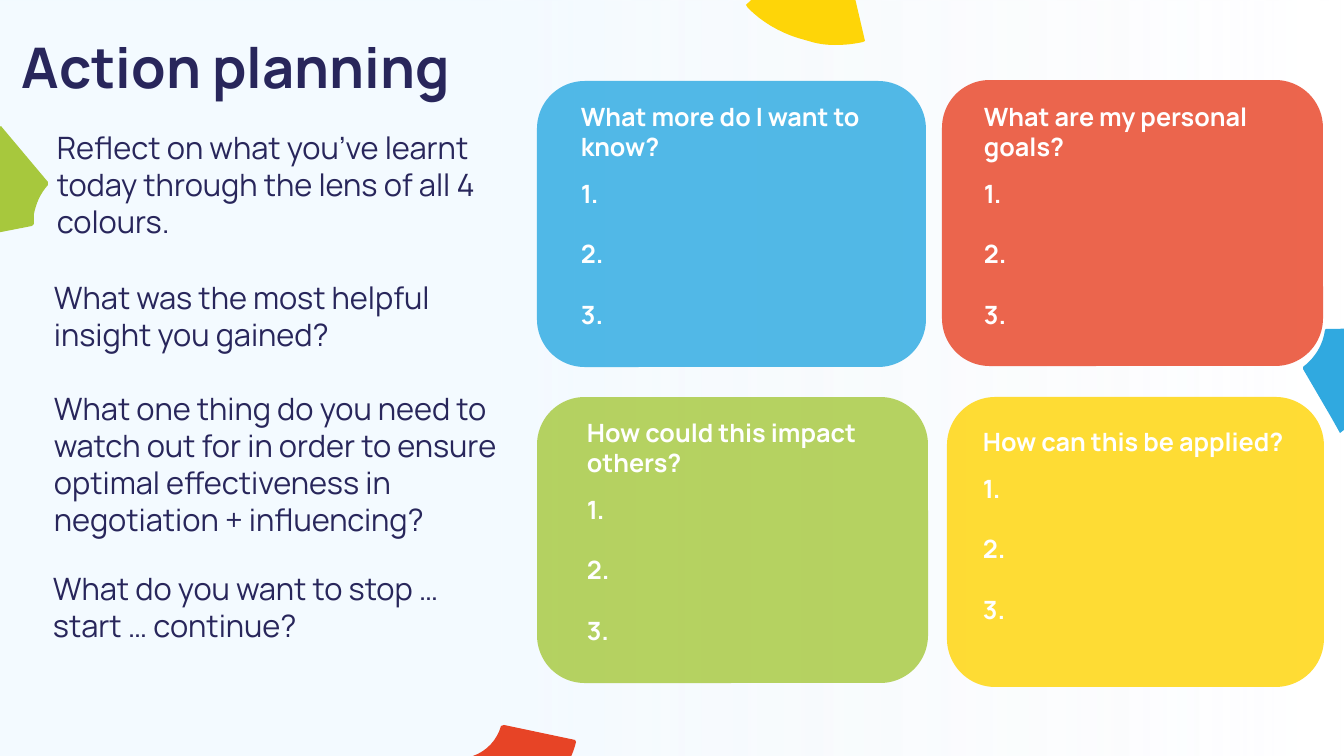
from lxml import etree
from pptx import Presentation
from pptx import util as u
from pptx.dml.color import RGBColor
from pptx.enum import shapes, text
from pptx.oxml.ns import qn

FONT, NAVY, WHITE = "Manrope", "28265B", "FFFFFF"
CARD_OPACITY = 82
LINE_PT = 21.6

PROMPTS = [
    ((12, 28, 620, 78), 40, True, ["Action planning"]),
    ((47, 124, 476, 122), 22, False,
     ["Reflect on what you’ve learnt today through the lens of all 4 colours."]),
    ((44, 274, 490, 271), 22, False,
     ["What was the most helpful insight you gained?",
      "What one thing do you need to watch out for in order to ensure optimal "
      "effectiveness in negotiation + influencing?"]),
    ((43, 565, 476, 122), 22, False,
     ["What do you want to stop … start … continue?"]),
]

CARDS = [
    ("What more do I want to know?", "2DAAE2", (537, 81, 389, 286), (571, 96, 353, 241)),
    ("What are my personal goals?", "E84427", (942, 80, 381, 286), (974, 96, 350, 248)),
    ("How could this impact others?", "A7C93F", (537, 397, 391, 286), (577, 412, 319, 241)),
    ("How can this be applied?", "FFD508", (947, 397, 377, 290), (973, 421, 347, 211)),
]

# Pairs are corners; six numbers are two curve handles and an end point.
WEDGES = [
    ("A7C83D", [(1, 126), (48, 182), (48, 185), (40, 194, 36, 204, 34, 214),
                (34, 224), (32, 226), (-9, 234), (-38, 239), (-40, 237),
                (-42, 219, -41, 201, -35, 183), (-31, 167, -23, 153, -13, 141),
                (-4, 131)]),
    ("E74426", [(548, 793), (532, 811, 514, 823, 494, 830), (492, 829),
                (478, 778), (472, 759), (473, 756),
                (487, 751, 497, 740, 501, 726), (504, 725), (575, 740),
                (576, 742), (573, 755, 566, 768, 558, 780)]),
    ("FED508", [(798, 38), (779, 32, 762, 22, 748, 8), (746, 5), (748, 3),
                (781, -27), (800, -44), (803, -44),
                (810, -37, 820, -33, 830, -31), (835, -30, 841, -30, 846, -31),
                (848, -30), (855, -2), (865, 41), (863, 42),
                (854, 44, 845, 45, 835, 45), (827, 45, 819, 44, 812, 42)]),
    ("30A9E0", [(1344, 430), (1351, 425), (1360, 418, 1369, 409, 1376, 400),
                (1386, 386, 1393, 371, 1397, 356),
                (1399, 347, 1400, 338, 1401, 330), (1399, 328), (1326, 329),
                (1325, 330), (1323, 345, 1315, 358, 1303, 367), (1303, 369),
                (1331, 417), (1340, 433)]),
]


def px(length):
    return u.Emu(round(length * 914400 / 100.8))


def rgb(value):
    return RGBColor.from_string(value)


def set_opacity(colour, percent):
    etree.SubElement(colour, qn("a:alpha")).set("val", str(percent * 1000))


def plain(shape):
    shape.shadow.inherit = False
    shape.line.fill.background()


def add_block(box):
    frame = slide.shapes.add_textbox(*map(px, box)).text_frame
    frame.word_wrap = True
    frame.auto_size = text.MSO_AUTO_SIZE.SHAPE_TO_FIT_TEXT
    return frame


def write(frame, index, wording, size, colour, bold, before=0, numbered=False):
    line = frame.add_paragraph() if index else frame.paragraphs[0]
    line.text = wording
    if index:
        line.space_before = u.Pt(before)
    if numbered:
        properties = line._p.get_or_add_pPr()
        properties.set("marL", str(px(38)))
        properties.set("indent", str(-px(38)))
        etree.SubElement(properties, qn("a:buFont")).set("typeface", "+mj-lt")
        etree.SubElement(properties, qn("a:buAutoNum")).set("type", "arabicPeriod")
    line.font.name, line.font.size, line.font.bold = FONT, u.Pt(size), bold
    line.font.color.rgb = rgb(colour)


def trace(outline, steps=8):
    points = [outline[0]]
    for stop in outline[1:]:
        if len(stop) == 2:
            points.append(stop)
            continue
        handles = [points[-1], stop[:2], stop[2:4], stop[4:]]
        for step in range(1, steps + 1):
            t = step / steps
            weights = ((1 - t) ** 3, 3 * t * (1 - t) ** 2, 3 * t * t * (1 - t), t ** 3)
            points.append(tuple(sum(w * h[axis] for w, h in zip(weights, handles))
                                for axis in (0, 1)))
    return [(px(x), px(y)) for x, y in points]


deck = Presentation()
deck.slide_width, deck.slide_height = px(1344), px(756)
slide = deck.slides.add_slide(deck.slide_layouts[6])

backdrop = slide.shapes.add_shape(shapes.MSO_SHAPE.RECTANGLE, 0, 0, px(1344), px(761))
plain(backdrop)
backdrop.fill.gradient()
backdrop.fill.gradient_angle = 180
for stop, position, colour in zip(backdrop.fill.gradient_stops, (0, 0.66), ("F6F8FC", "F3FAFF")):
    stop.position = position
    stop.color.rgb = rgb(colour)
set_opacity(next(backdrop._element.iter(qn("a:srgbClr"))), 0)

for heading, colour, panel_box, text_box in CARDS:
    panel = slide.shapes.add_shape(shapes.MSO_SHAPE.ROUNDED_RECTANGLE, *map(px, panel_box))
    plain(panel)
    panel.fill.solid()
    panel.fill.fore_color.rgb = rgb(colour)
    set_opacity(next(panel._element.iter(qn("a:srgbClr"))), CARD_OPACITY)
    answers = add_block(text_box)
    write(answers, 0, heading, 18, WHITE, True)
    for number in (1, 2, 3):
        gap = 12 if number == 1 else LINE_PT
        write(answers, number, " ", 18, WHITE, True, gap, numbered=True)

for colour, outline in WEDGES:
    points = trace(outline)
    builder = slide.shapes.build_freeform(*points[0])
    builder.add_line_segments(points[1:], close=True)
    wedge = builder.convert_to_shape()
    plain(wedge)
    wedge.fill.solid()
    wedge.fill.fore_color.rgb = rgb(colour)

for box, size, bold, wordings in PROMPTS:
    prompt = add_block(box)
    for index, wording in enumerate(wordings):
        write(prompt, index, wording, size, NAVY, bold, before=size * 1.2)

deck.save("out.pptx")
